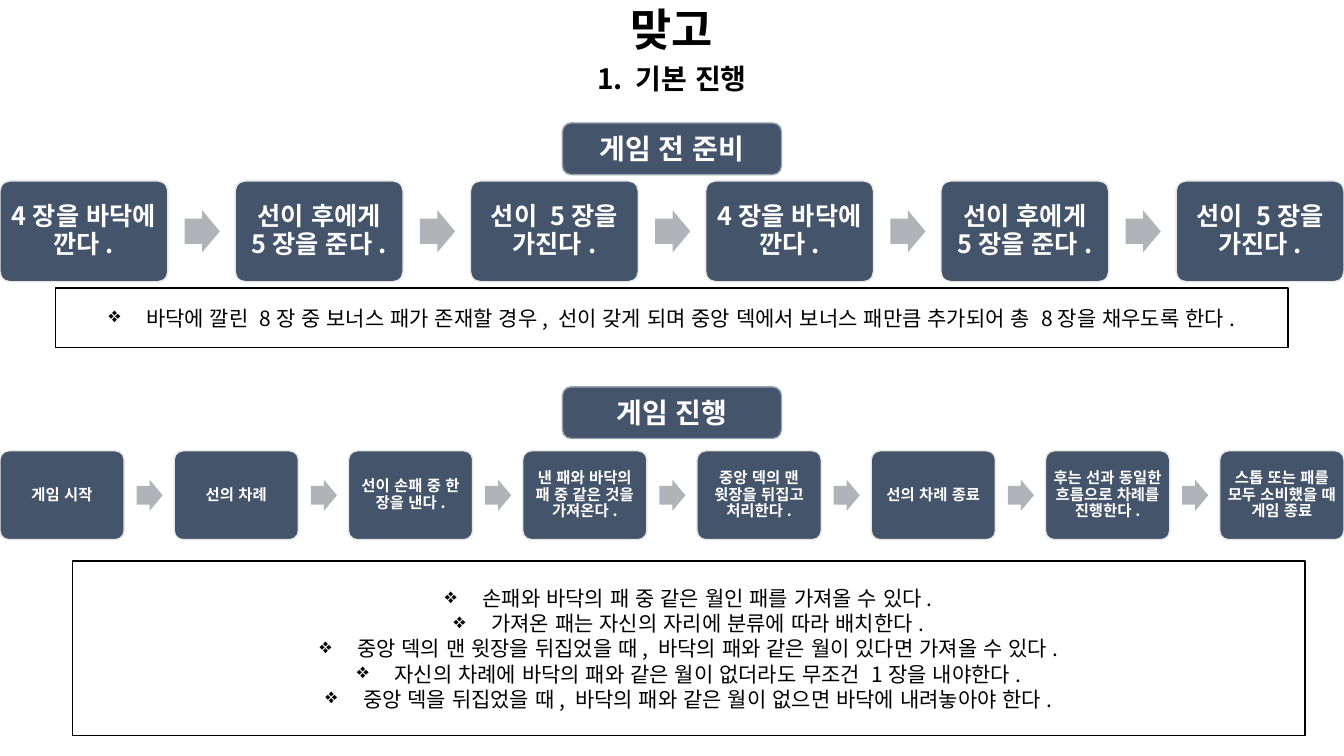
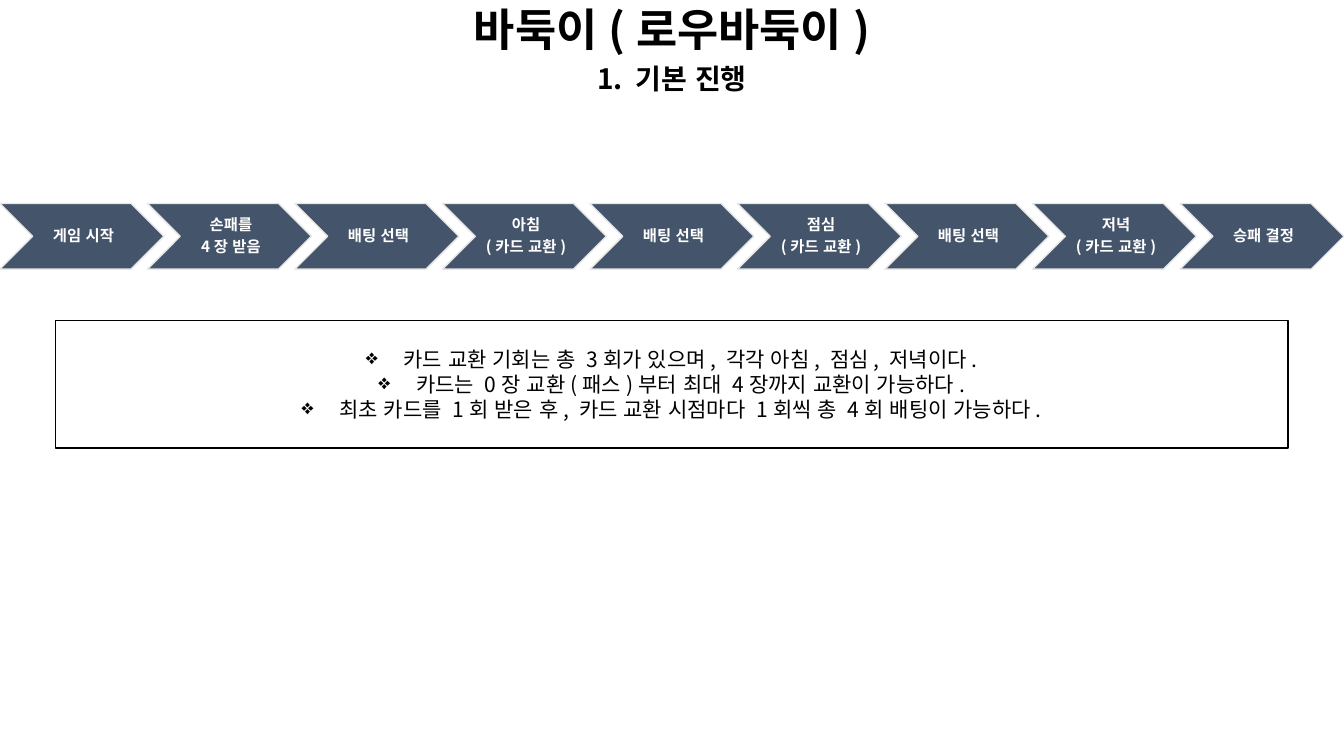
from lxml import etree
from pptx import Presentation
from pptx import util as u
from pptx.dml import color
from pptx.enum import lang, shapes, text
from pptx.oxml import ns

FONT = "Noto Sans CJK KR"
COLORS = {
    "ink": "000000",
    "paper": "FFFFFF",
    "navy": "44546A",
    "step_edge": "E7E6E6",
    "banner_edge": "9CA2AC",
    "arrow": "B0B4B9",
}
SLIDE_WIDTH, SLIDE_HEIGHT = 33.87, 19.05
NOTE_WIDTH, NOTE_LEFT = 31.06, 1.4
BANNER_WIDTH, BANNER_HEIGHT = 5.52, 1.3
BULLET_INDENT = 0.95
FORMATS = {
    "title": {"size": u.Pt(32), "bold": True},
    "heading": {"size": u.Pt(20), "bold": True},
    "large_step": {"size": u.Pt(18), "bold": True},
    "small_step": {"size": u.Pt(11), "bold": True},
    "note": {"size": u.Pt(15), "bold": False},
}
ROUND = shapes.MSO_SHAPE.ROUNDED_RECTANGLE


def rgb(name):
    return color.RGBColor.from_string(COLORS[name])


def write(box, lines, style, ink, insets=None):
    frame = box.text_frame
    frame.word_wrap = True
    frame.vertical_anchor = text.MSO_ANCHOR.MIDDLE
    for side, inset in zip(("left", "top", "right", "bottom"), insets or ()):
        setattr(frame, f"margin_{side}", u.Cm(inset))
    for index, line in enumerate(lines):
        para = frame.add_paragraph() if index else frame.paragraphs[0]
        para.alignment = text.PP_ALIGN.CENTER
        span = para.add_run()
        span.text = line
        values = {"name": FONT, "language_id": lang.MSO_LANGUAGE_ID.KOREAN}
        for name, value in {**values, **FORMATS[style]}.items():
            setattr(span.font, name, value)
        span.font.color.rgb = rgb(ink)
        latin = span.font._element.find(ns.qn("a:latin"))
        east_asian = etree.Element(ns.qn("a:ea"), typeface=FONT)
        latin.addnext(east_asian)
    return frame.paragraphs


def add_block(page, kind, place, fill, edge=None):
    block = page.shapes.add_shape(kind, *map(u.Cm, place))
    block.shadow.inherit = False
    block.fill.solid()
    block.fill.fore_color.rgb = rgb(fill)
    if edge:
        block.line.color.rgb = rgb(edge)
        block.line.width = u.Pt(1)
    else:
        block.line.fill.background()
    return block


def add_heading(page, top, height, line, style):
    box = page.shapes.add_textbox(*map(u.Cm, (0, top, SLIDE_WIDTH, height)))
    write(box, [line], style, "ink")


def add_page(deck, title, subtitle):
    page = deck.slides.add_slide(deck.slide_layouts[6])
    add_heading(page, 0, 1.45, title, "title")
    add_heading(page, 1.45, 1.04, subtitle, "heading")
    return page


def add_banner(page, top, line):
    left = (SLIDE_WIDTH - BANNER_WIDTH) / 2
    place = (left, top, BANNER_WIDTH, BANNER_HEIGHT)
    banner = add_block(page, ROUND, place, "navy", "banner_edge")
    write(banner, [line], "heading", "paper")


def add_note(page, left, top, height, lines):
    place = (left, top, NOTE_WIDTH, height)
    note = add_block(page, shapes.MSO_SHAPE.RECTANGLE, place, "paper", "ink")
    for para in write(note, lines, "note", "ink"):
        layout = para._p.get_or_add_pPr()
        layout.set("marL", str(u.Cm(BULLET_INDENT)))
        layout.set("indent", str(-u.Cm(BULLET_INDENT)))
        etree.SubElement(layout, ns.qn("a:buChar"), char="❖")


def add_steps(page, kind, top, width, height, steps, style, insets):
    pitch = (SLIDE_WIDTH - width) / (len(steps) - 1)
    for index, step in enumerate(steps):
        place = (index * pitch, top, width, height)
        block = add_block(page, kind, place, "navy", "step_edge")
        if kind == ROUND:
            block.adjustments[0] = 0.1
        for para in write(block, step.split("\n"), style, "paper", insets):
            para.line_spacing = 0.9
            para.space_after = u.Pt(FORMATS[style]["size"].pt * 0.35)


def add_arrows(page, top, width, height, count):
    pitch = (SLIDE_WIDTH - width) / (count - 1)
    arrow_width, arrow_height = width * 0.21, width * 0.25
    arrow_top = top + (height - arrow_height) / 2
    for index in range(count - 1):
        place = (index * pitch + width * 1.1, arrow_top, arrow_width, arrow_height)
        arrow = add_block(page, shapes.MSO_SHAPE.RIGHT_ARROW, place, "arrow")
        arrow.adjustments[0] = 0.6


def add_box_flow(page, top, width, height, steps, style, inset):
    add_steps(page, ROUND, top, width, height, steps, style, [inset] * 4)
    add_arrows(page, top, width, height, len(steps))


def add_matgo_page(deck):
    page = add_page(deck, "맞고", "1. 기본 진행")
    add_banner(page, 3.1, "게임 전 준비")
    deal = ["4장을 바닥에 깐다.", "선이 후에게 5장을 준다.", "선이 5장을 가진다."]
    add_box_flow(page, 4.56, 4.23, 2.54, deal * 2, "large_step", 0.18)
    add_note(page, NOTE_LEFT, 7.26, 1.5, [
        "바닥에 깔린 8장 중 보너스 패가 존재할 경우, 선이 갖게 되며 "
        "중앙 덱에서 보너스 패만큼 추가되어 총 8장을 채우도록 한다.",
    ])
    add_banner(page, 9.75, "게임 진행")
    turns = [
        "게임 시작",
        "선의 차례",
        "선이 손패 중 한 장을 낸다.",
        "낸 패와 바닥의 패 중 같은 것을 가져온다.",
        "중앙 덱의 맨 윗장을 뒤집고 처리한다.",
        "선의 차례 종료",
        "후는 선과 동일한 흐름으로 차례를 진행한다.",
        "스톱 또는 패를 모두 소비했을 때 게임 종료",
    ]
    add_box_flow(page, 11.36, 3.13, 2.24, turns, "small_step", 0.12)
    add_note(page, 1.83, 14.14, 4.4, [
        "손패와 바닥의 패 중 같은 월인 패를 가져올 수 있다.",
        "가져온 패는 자신의 자리에 분류에 따라 배치한다.",
        "중앙 덱의 맨 윗장을 뒤집었을 때, 바닥의 패와 같은 월이 있다면 가져올 수 있다.",
        "자신의 차례에 바닥의 패와 같은 월이 없더라도 무조건 1장을 내야한다.",
        "중앙 덱을 뒤집었을 때, 바닥의 패와 같은 월이 없으면 바닥에 내려놓아야 한다.",
    ])


def add_baduki_page(deck):
    page = add_page(deck, "바둑이(로우바둑이)", "1. 기본 진행")
    rounds = ["게임 시작", "손패를\n4장 받음"]
    for meal in ("아침", "점심", "저녁"):
        rounds += ["배팅 선택", f"{meal}\n(카드 교환)"]
    rounds.append("승패 결정")
    add_steps(page, shapes.MSO_SHAPE.CHEVRON, 5.13, 4.13, 1.65, rounds,
              "small_step", (0.12, 0.04, 0.04, 0.04))
    add_note(page, NOTE_LEFT, 8.08, 3.21, [
        "카드 교환 기회는 총 3회가 있으며, 각각 아침, 점심, 저녁이다.",
        "카드는 0장 교환(패스)부터 최대 4장까지 교환이 가능하다.",
        "최초 카드를 1회 받은 후, 카드 교환 시점마다 1회씩 총 4회 배팅이 가능하다.",
    ])


def main():
    deck = Presentation()
    deck.slide_width = u.Cm(SLIDE_WIDTH)
    deck.slide_height = u.Cm(SLIDE_HEIGHT)
    add_matgo_page(deck)
    add_baduki_page(deck)
    deck.save("out.pptx")


if __name__ == "__main__":
    main()
